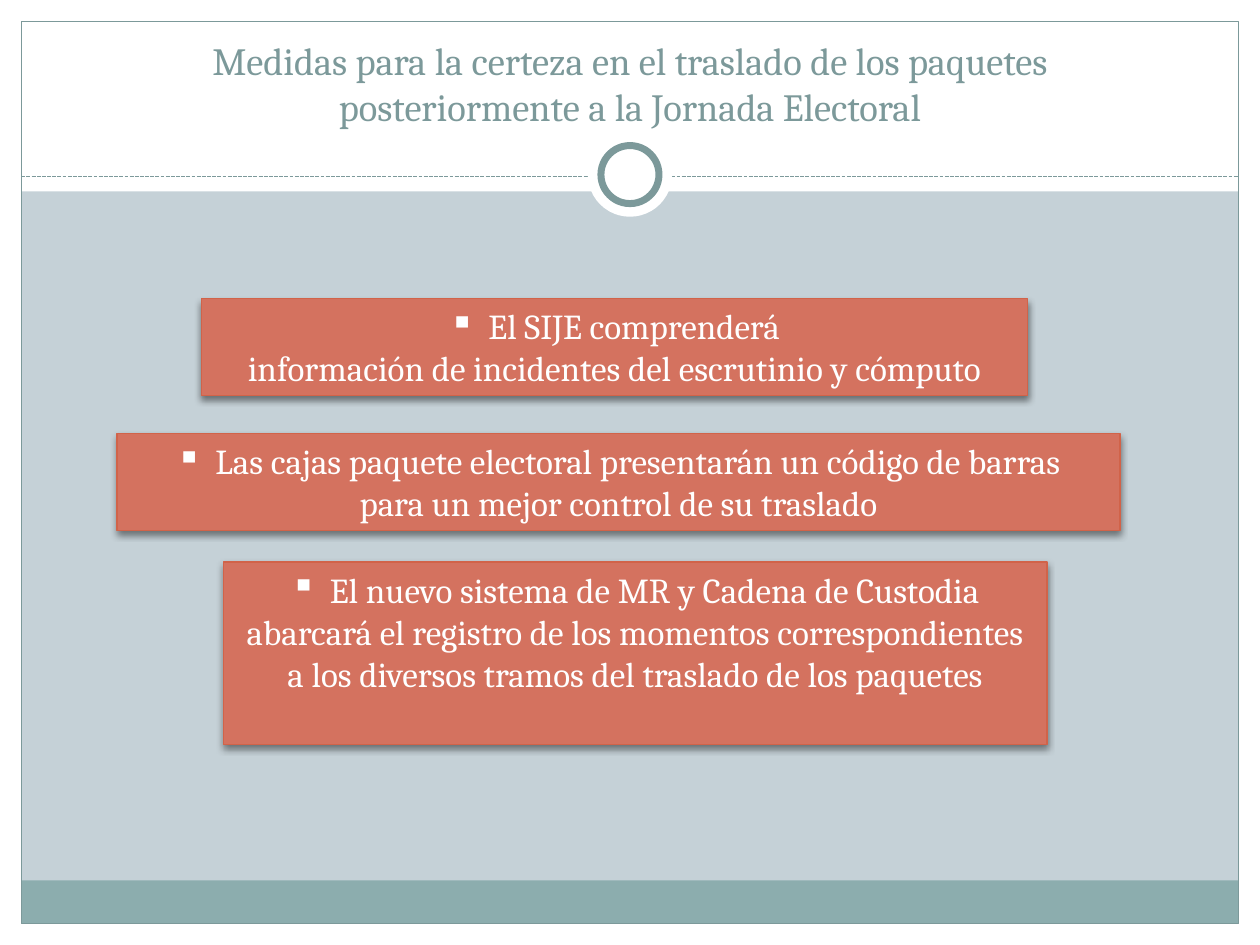
"""Build a slide on moving ballot packages after election day."""
import lxml.etree
import pptx
import pptx.dml.color
import pptx.enum.dml
import pptx.enum.shapes
import pptx.enum.text
import pptx.oxml.ns
import pptx.util

HUES = {
    "back": "C5D1D7", "white": "FFFFFF", "band": "8CADAE", "teal": "7C999A",
    "card": "D4725F", "edge": "D16349", "shade": "000000",
}
WIDE, HIGH, EDGE = 25.4, 19.05, 0.43
HEAD, RULE, RING = 3.86, 3.56, 3.52
FONT = "Cambria"
TITLE = ("Medidas para la certeza en el traslado de los paquetes\n"
         "posteriormente a la Jornada Electoral")
CARDS = [
    ((4.06, 6.02, 16.66, 1.96), False,
     ["El SIJE comprenderá",
      "información de incidentes del escrutinio y cómputo"]),
    ((4.5, 11.33, 16.61, 3.68), True,
     ["El nuevo sistema de MR y Cadena de Custodia",
      "abarcará el registro de los momentos correspondientes "
      "a los diversos tramos del traslado de los paquetes"]),
    ((2.36, 8.74, 20.22, 1.96), False,
     ["Las cajas paquete electoral presentarán un código de barras",
      "para un mejor control de su traslado"]),
]
KIND = pptx.enum.shapes.MSO_SHAPE
ALIGN = pptx.enum.text.PP_ALIGN
Cm, Pt = pptx.util.Cm, pptx.util.Pt


def hue(name):
    return pptx.dml.color.RGBColor.from_string(HUES[name])


def node(root, tag, **attrs):
    return lxml.etree.SubElement(root, pptx.oxml.ns.qn(tag), attrs)


def draw(slide, box, fill=None, line=None, width=0.75, kind=KIND.RECTANGLE):
    shape = slide.shapes.add_shape(kind, *map(Cm, box))
    shape.shadow.inherit = False
    if fill:
        shape.fill.solid()
        shape.fill.fore_color.rgb = hue(fill)
    else:
        shape.fill.background()
    if line:
        shape.line.color.rgb = hue(line)
        shape.line.width = Pt(width)
    else:
        shape.line.fill.background()
    return shape


def disc(slide, size, **style):
    box = ((WIDE - size) / 2, RING - size / 2, size, size)
    draw(slide, box, "white", kind=KIND.OVAL, **style)


def style(para, size, color):
    para.alignment = ALIGN.CENTER
    for run in para.runs:
        run.font.name = FONT
        run.font.size = Pt(size)
        run.font.color.rgb = hue(color)


def shade(shape):
    root = shape._element.spPr.find(pptx.oxml.ns.qn("a:effectLst"))
    cast = node(root, "a:outerShdw", blurRad=str(Pt(4)), dist=str(Pt(2)),
                dir="5400000", rotWithShape="0")
    tint = node(cast, "a:srgbClr", val=HUES["shade"])
    node(tint, "a:alpha", val="45000")


def mark(para):
    props = para._p.get_or_add_pPr()
    props.set("marL", str(Cm(0.79)))
    props.set("indent", str(-Cm(0.79)))
    node(props, "a:buChar", char="▪")


def card(slide, box, wrap, lines):
    shape = draw(slide, box, "card", "edge")
    shade(shape)
    frame = shape.text_frame
    frame.word_wrap = wrap
    frame.vertical_anchor = pptx.enum.text.MSO_ANCHOR.TOP
    frame.text = "\n".join(lines)
    for para in frame.paragraphs:
        style(para, 20, "white")
    mark(frame.paragraphs[0])


def frame(slide):
    for box in [(0, HIGH - EDGE, WIDE, EDGE), (0, 0, WIDE, HEAD),
                (0, 0, EDGE, HIGH), (WIDE - EDGE, 0, EDGE, HIGH)]:
        draw(slide, box, "white")
    span = WIDE - 2 * EDGE
    draw(slide, (EDGE, 17.75, span, 0.87), "band")
    draw(slide, (EDGE, EDGE, span, HIGH - 2 * EDGE), line="teal")
    rule = slide.shapes.add_connector(
        pptx.enum.shapes.MSO_CONNECTOR.STRAIGHT,
        Cm(EDGE), Cm(RULE), Cm(WIDE - EDGE), Cm(RULE))
    rule.line.color.rgb = hue("teal")
    rule.line.width = Pt(0.75)
    rule.line.dash_style = pptx.enum.dml.MSO_LINE.SQUARE_DOT
    node(rule._element.spPr, "a:effectLst")
    disc(slide, 1.7)
    disc(slide, 1.17, line="teal", width=4)


def title(slide):
    box = slide.shapes.add_textbox(Cm(0.85), Cm(0.64), Cm(23.7), Cm(2.1))
    text = box.text_frame
    text.word_wrap = True
    text.vertical_anchor = pptx.enum.text.MSO_ANCHOR.BOTTOM
    para = text.paragraphs[0]
    para.text = TITLE
    style(para, 22, "teal")


def main():
    deck = pptx.Presentation()
    deck.slide_width, deck.slide_height = Cm(WIDE), Cm(HIGH)
    slide = deck.slides.add_slide(deck.slide_layouts[6])
    slide.background.fill.solid()
    slide.background.fill.fore_color.rgb = hue("back")
    frame(slide)
    for item in CARDS:
        card(slide, *item)
    title(slide)
    deck.save("out.pptx")


if __name__ == "__main__":
    main()
